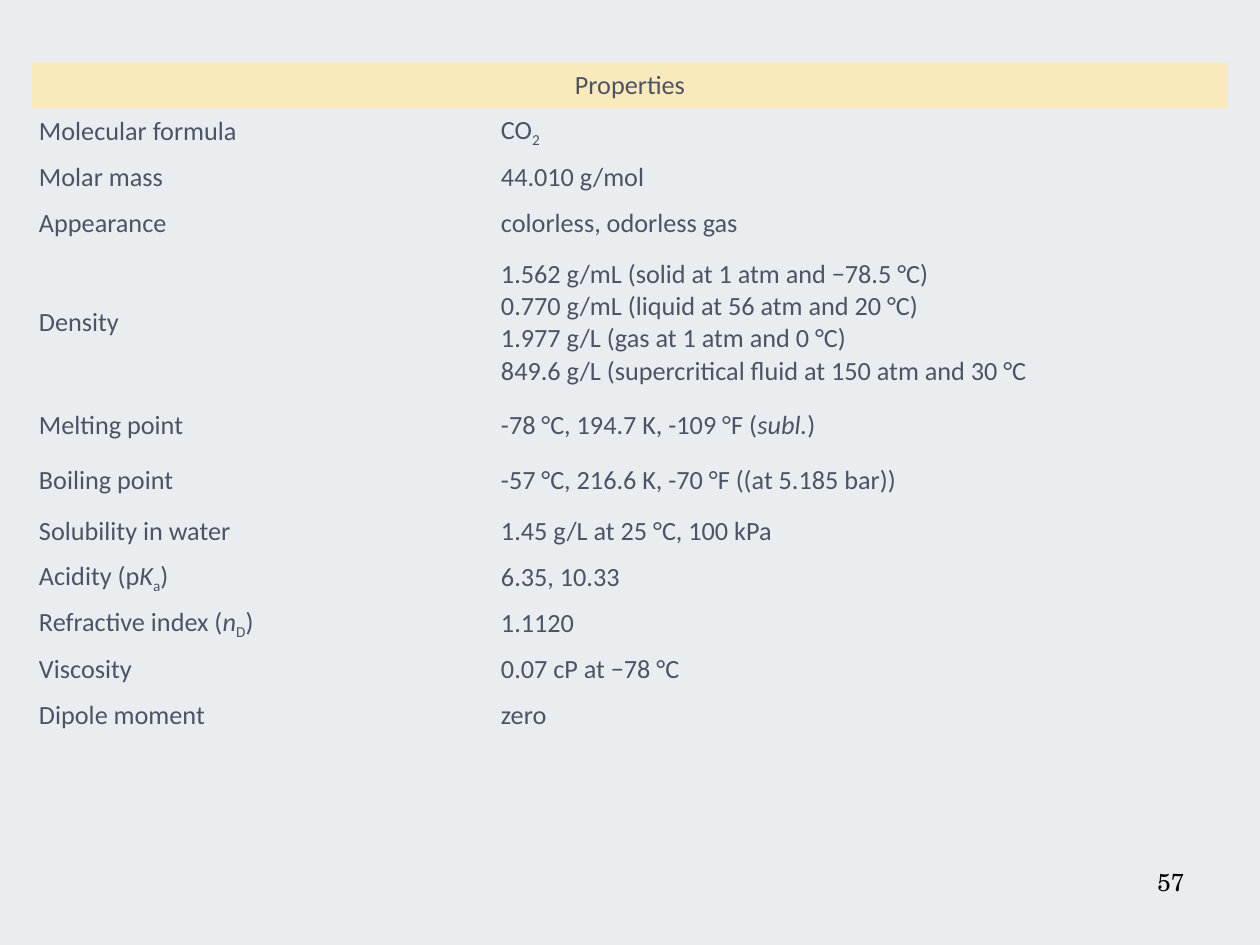
import pptx
import pptx.util
import pptx.dml.color
import pptx.enum.text
import pptx.oxml.ns

PX = 914400 // 126
ALIGN = pptx.enum.text.PP_ALIGN
MID = pptx.enum.text.MSO_ANCHOR.MIDDLE
THEME = {
    "back": "E9EDEF",
    "head": "F8EABA",
    "body": {"name": "Calibri", "size": 15, "color": "4D5367", "bold": False},
    "page": {"name": "TeX Gyre Schola", "size": 14, "color": "000000"},
}
PLAIN = "{2D5ABB26-0587-4C30-8999-92F81FD0307C}"
ROW = 46
TALL = {"Density": 152, "Melting point": 53, "Boiling point": 57}
ROWS = [
    ("Properties", ""),
    ("Molecular formula", "CO|_2"),
    ("Molar mass", "44.010 g/mol"),
    ("Appearance", "colorless, odorless gas"),
    ("Density", "|\n|".join([
        "1.562 g/mL (solid at 1 atm and −78.5 °C)",
        "0.770 g/mL (liquid at 56 atm and 20 °C)",
        "1.977 g/L (gas at 1 atm and 0 °C)",
        "849.6 g/L (supercritical fluid at 150 atm and 30 °C",
    ])),
    ("Melting point", "-78 °C, 194.7 K, -109 °F (|*subl.|)"),
    ("Boiling point", "-57 °C, 216.6 K, -70 °F ((at 5.185 bar))"),
    ("Solubility in water", "1.45 g/L at 25 °C, 100 kPa"),
    ("Acidity (p|*K|_a|)", "6.35, 10.33"),
    ("Refractive index (|*n|_D|)", "1.1120"),
    ("Viscosity", "0.07 cP at −78 °C"),
    ("Dipole moment", "zero"),
]


def paint(font, look):
    for key, val in look.items():
        if key == "color":
            font.color.rgb = pptx.dml.color.RGBColor.from_string(val)
        else:
            setattr(font, key, pptx.util.Pt(val) if key == "size" else val)


def write(para, text, look):
    for part in text.split("|"):
        if part == "\n":
            para.add_line_break()
            continue
        run = para.add_run()
        run.text = part.lstrip("*_")
        paint(run.font, look)
        if part.startswith("*"):
            run.font.italic = True
        if part.startswith("_"):
            run.font._element.set("baseline", "-25000")


deck = pptx.Presentation()
deck.slide_width = 1260 * PX
deck.slide_height = 945 * PX
slide = deck.slides.add_slide(deck.slide_layouts[6])
fill = slide.background.fill
fill.solid()
fill.fore_color.rgb = pptx.dml.color.RGBColor.from_string(THEME["back"])

page = slide.shapes.add_textbox(903 * PX, 861 * PX, 294 * PX, 65 * PX)
page.text_frame.word_wrap = True
para = page.text_frame.paragraphs[0]
para.alignment = ALIGN.RIGHT
write(para, "57", THEME["page"])

tall = [TALL.get(name, ROW) for name, _ in ROWS]
frame = slide.shapes.add_table(
    len(ROWS), 2, 32 * PX, 63 * PX, 1196 * PX, sum(tall) * PX)
for node in frame._element.iter(pptx.oxml.ns.qn("a:tableStyleId")):
    node.text = PLAIN
table = frame.table
table.first_row = table.horz_banding = False
for col, wide in zip(table.columns, (462, 734)):
    col.width = wide * PX

pad = {"margin_left": 7 * PX, "margin_right": 7 * PX,
       "margin_top": 4 * PX, "margin_bottom": 4 * PX,
       "vertical_anchor": MID}
for r, pair in enumerate(ROWS):
    table.rows[r].height = tall[r] * PX
    for c, text in enumerate(pair):
        cell = table.cell(r, c)
        cell.fill.background()
        for key, val in pad.items():
            setattr(cell, key, val)
        if text:
            write(cell.text_frame.paragraphs[0], text, THEME["body"])

head = table.cell(0, 0)
head.merge(table.cell(0, 1))
head.fill.solid()
head.fill.fore_color.rgb = pptx.dml.color.RGBColor.from_string(THEME["head"])
head.text_frame.paragraphs[0].alignment = ALIGN.CENTER

deck.save("out.pptx")
